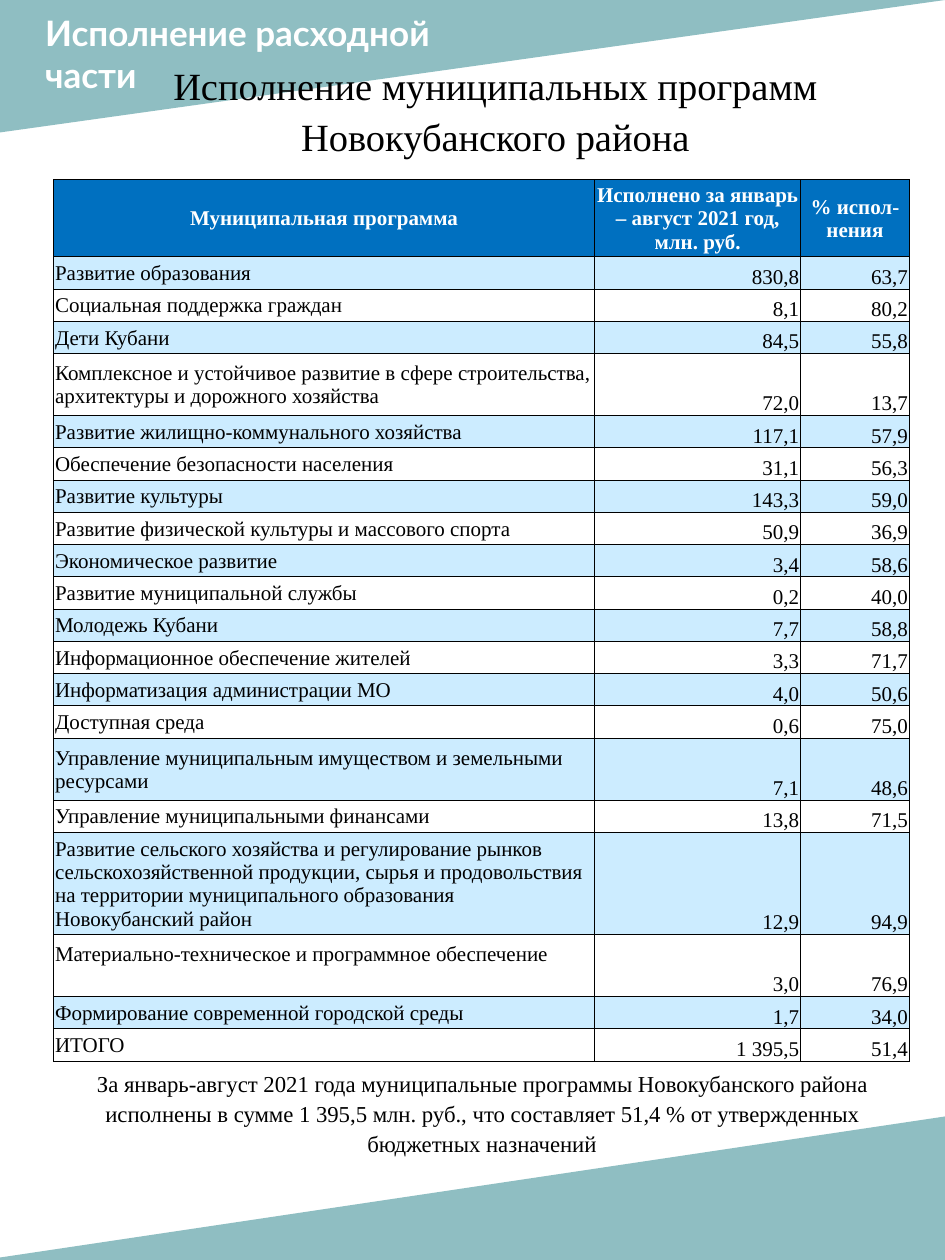
from dataclasses import dataclass

from lxml import etree
from pptx import Presentation
from pptx import util as u
from pptx.dml.color import RGBColor
from pptx.enum import shapes, text
from pptx.oxml.ns import qn


@dataclass(frozen=True)
class Theme:
    teal: str = "519AA0"
    header: str = "0070C0"
    band: str = "CCECFF"
    white: str = "FFFFFF"
    black: str = "000000"
    serif: str = "Times New Roman"
    sans: str = "Lato"
    section_size: int = 20
    title_size: int = 22
    note_size: int = 13
    table_size: int = 12


theme = Theme()
LEFT, CENTER, RIGHT = text.PP_ALIGN.LEFT, text.PP_ALIGN.CENTER, text.PP_ALIGN.RIGHT
MIDDLE, BOTTOM = text.MSO_ANCHOR.MIDDLE, text.MSO_ANCHOR.BOTTOM


def write(paragraph, words, size, color, font=theme.serif, bold=False, align=CENTER):
    """Add one formatted run and align its paragraph."""
    paragraph.alignment = align
    run = paragraph.add_run()
    run.text = words
    run.font.size = u.Pt(size)
    run.font.name = font
    run.font.bold = bold
    run.font.color.rgb = RGBColor.from_string(color)


def border_cell(cell):
    """Draw a thin black line on all four sides; lines go before the fill."""
    properties = cell._tc.get_or_add_tcPr()
    for position, side in enumerate(("a:lnL", "a:lnR", "a:lnT", "a:lnB")):
        line = etree.Element(qn(side), w=str(u.Pt(0.5)))
        fill = etree.SubElement(line, qn("a:solidFill"))
        etree.SubElement(fill, qn("a:srgbClr"), val=theme.black)
        properties.insert(position, line)


presentation = Presentation()
presentation.slide_width = u.Cm(19.05)
presentation.slide_height = u.Cm(25.4)
slide = presentation.slides.add_slide(presentation.slide_layouts[6])

# Corner triangles
triangles = [
    ((0, 0, 19.05, 2.67), "flipH"),
    ((-0.33, 22.5, 19.43, 2.9), "flipV"),
]
for box, flip in triangles:
    triangle = slide.shapes.add_shape(
        shapes.MSO_SHAPE.RIGHT_TRIANGLE, *(u.Cm(length) for length in box))
    triangle.shadow.inherit = False
    triangle.rotation = 180
    triangle._element.spPr.find(qn("a:xfrm")).set(flip, "1")
    triangle.fill.solid()
    triangle.fill.fore_color.rgb = RGBColor.from_string(theme.teal)
    color = triangle._element.spPr.find(qn("a:solidFill"))[0]
    etree.SubElement(color, qn("a:alpha"), val="64000")
    triangle.line.fill.background()

# Section name, title and closing note
text_boxes = [
    ((0.66, 0.1, 12.37, 1.96), ["Исполнение расходной", "части"],
     dict(size=theme.section_size, color=theme.white, font=theme.sans,
          bold=True, align=LEFT), 1.0),
    ((1.63, 1.04, 16.71, 2.11),
     ["Исполнение муниципальных программ Новокубанского района"],
     dict(size=theme.title_size, color=theme.black), 1.1),
    ((1.09, 21.39, 17.25, 1.93),
     ["За январь-август 2021 года муниципальные программы Новокубанского района "
      "исполнены в сумме 1 395,5 млн. руб., что составляет 51,4 % от утвержденных "
      "бюджетных назначений"],
     dict(size=theme.note_size, color=theme.black), 1.1),
]
for box, lines, style, spacing in text_boxes:
    frame = slide.shapes.add_textbox(*(u.Cm(length) for length in box)).text_frame
    frame.word_wrap = True
    frame.auto_size = text.MSO_AUTO_SIZE.SHAPE_TO_FIT_TEXT
    for index, line in enumerate(lines):
        paragraph = frame.add_paragraph() if index else frame.paragraphs[0]
        paragraph.line_spacing = spacing
        write(paragraph, line, **style)

# Programme table
SINGLE, DOUBLE, TALL = 0.65, 1.25, 1.88
rows = [
    (DOUBLE, "Муниципальная программа",
     "Исполнено за январь – август 2021 год, млн. руб.", "% испол-нения"),
    (SINGLE, "Развитие образования", "830,8", "63,7"),
    (SINGLE, "Социальная поддержка граждан", "8,1", "80,2"),
    (SINGLE, "Дети Кубани", "84,5", "55,8"),
    (DOUBLE, "Комплексное и устойчивое развитие в сфере строительства, "
     "архитектуры и дорожного хозяйства", "72,0", "13,7"),
    (SINGLE, "Развитие жилищно-коммунального хозяйства", "117,1", "57,9"),
    (SINGLE, "Обеспечение безопасности населения", "31,1", "56,3"),
    (SINGLE, "Развитие культуры", "143,3", "59,0"),
    (SINGLE, "Развитие физической культуры и массового спорта", "50,9", "36,9"),
    (SINGLE, "Экономическое развитие", "3,4", "58,6"),
    (SINGLE, "Развитие муниципальной службы", "0,2", "40,0"),
    (SINGLE, "Молодежь Кубани", "7,7", "58,8"),
    (SINGLE, "Информационное обеспечение жителей", "3,3", "71,7"),
    (SINGLE, "Информатизация администрации МО", "4,0", "50,6"),
    (SINGLE, "Доступная среда", "0,6", "75,0"),
    (DOUBLE, "Управление муниципальным имуществом и земельными ресурсами",
     "7,1", "48,6"),
    (SINGLE, "Управление муниципальными финансами", "13,8", "71,5"),
    (TALL, "Развитие сельского хозяйства и регулирование рынков "
     "сельскохозяйственной продукции, сырья и продовольствия на территории "
     "муниципального образования Новокубанский район", "12,9", "94,9"),
    (DOUBLE, "Материально-техническое и программное обеспечение", "3,0", "76,9"),
    (SINGLE, "Формирование современной городской среды", "1,7", "34,0"),
    (SINGLE, "ИТОГО", "1 395,5", "51,4"),
]
SUPPLY_ROW = 18
column_widths = [10.91, 4.15, 2.19]

table = slide.shapes.add_table(
    len(rows), len(column_widths), u.Cm(1.08), u.Cm(3.62),
    u.Cm(sum(column_widths)), u.Cm(sum(row[0] for row in rows))).table
table.first_row = False
table.horz_banding = False
for column, width in zip(table.columns, column_widths):
    column.width = u.Cm(width)

for row_index, (height, *values) in enumerate(rows):
    table.rows[row_index].height = u.Cm(height)
    is_header = row_index == 0
    band = theme.band if row_index % 2 else theme.white
    for column_index, value in enumerate(values):
        is_number = column_index > 0 and not is_header
        cell = table.cell(row_index, column_index)
        cell.margin_left = cell.margin_right = cell.margin_top = u.Cm(0.03)
        cell.margin_bottom = 0
        cell.vertical_anchor = BOTTOM if is_number else MIDDLE
        cell.fill.solid()
        cell.fill.fore_color.rgb = RGBColor.from_string(
            theme.header if is_header else band)
        border_cell(cell)
        write(cell.text_frame.paragraphs[0], value, theme.table_size,
              theme.white if is_header else theme.black, bold=is_header,
              align=CENTER if is_header else RIGHT if is_number else LEFT)

# This programme name sits in the upper half of its row
table.cell(SUPPLY_ROW, 0).margin_bottom = u.Cm(0.48)

presentation.save("out.pptx")
